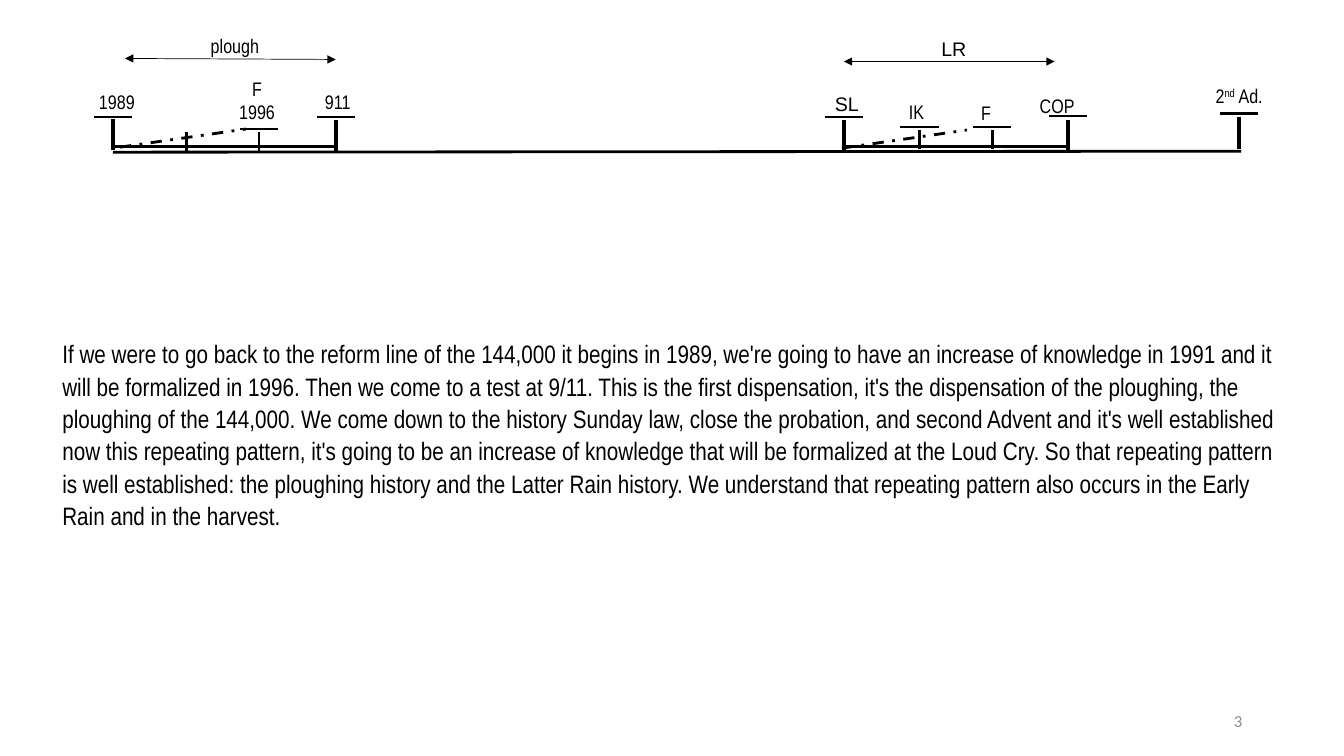
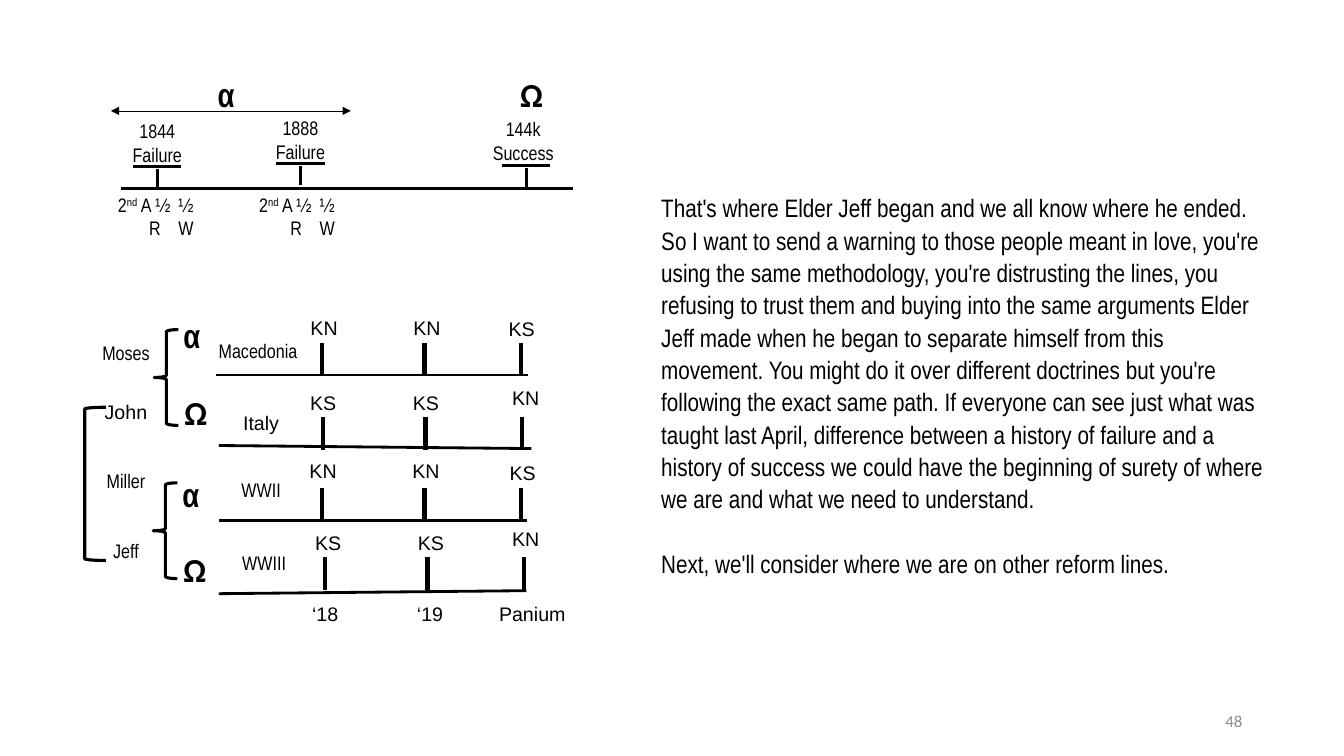
from lxml.etree import SubElement
from pptx import Presentation
from pptx.dml.color import RGBColor
from pptx.enum.dml import MSO_LINE
from pptx.enum.shapes import MSO_CONNECTOR, MSO_SHAPE
from pptx.enum.text import MSO_ANCHOR, PP_ALIGN
from pptx.oxml.ns import qn
from pptx.util import Inches, Pt

COLORS = {"ink": "000000", "page_number": "8C8C8C"}
NARROW, SANS, PLAIN = "Arial Narrow", "Arial", "Calibri"


class Sketch:
    """Holds the deck, its style and the current page."""

    def __init__(self):
        self.deck = Presentation()
        self.deck.slide_width = Inches(13.33)
        self.deck.slide_height = Inches(7.5)
        self.page = None

    def new_page(self, number):
        self.page = self.deck.slides.add_slide(self.deck.slide_layouts[6])
        box = self.text([number], 9.42, 6.95, 3, 0.4, 12, PLAIN,
                        color="page_number", align=PP_ALIGN.RIGHT)
        box.text_frame.vertical_anchor = MSO_ANCHOR.MIDDLE

    def text(self, lines, left, top, width, height, size, font,
             color="ink", bold=False, align=PP_ALIGN.LEFT):
        """Add one paragraph per line; ^marks^ enclose superscript."""
        box = self.page.shapes.add_textbox(
            Inches(left), Inches(top), Inches(width), Inches(height))
        frame = box.text_frame
        frame.word_wrap = True
        for index, line in enumerate(lines):
            para = frame.add_paragraph() if index else frame.paragraphs[0]
            para.alignment = align
            for part, words in enumerate(line.split("^")):
                span = para.add_run()
                span.text = words
                span.font.size = Pt(size)
                span.font.name = font
                span.font.bold = bold
                span.font.color.rgb = RGBColor.from_string(COLORS[color])
                if part % 2:
                    span._r.get_or_add_rPr().set("baseline", "30000")
        return box

    def body(self, paragraphs, left, top, width, height):
        box = self.text(paragraphs, left, top, width, height, 18, NARROW)
        for index, para in enumerate(box.text_frame.paragraphs):
            para.line_spacing = 1.07
            para.space_before = Pt(23 if index else 0)

    def label(self, words, left, top, width=0.94, font=NARROW,
              align=PP_ALIGN.CENTER):
        lines = words.split("\n")
        box = self.text(lines, left, top, width, 0.31 * len(lines), 14, font,
                        align=align)
        frame = box.text_frame
        frame.margin_left = frame.margin_right = Inches(0.04)
        frame.margin_top = frame.margin_bottom = Inches(0.04)
        return box

    def tabbed_label(self, words, left, top, width, stops):
        box = self.label(words, left, top, width, align=PP_ALIGN.LEFT)
        for para in box.text_frame.paragraphs:
            tabs = SubElement(para._p.get_or_add_pPr(), qn("a:tabLst"))
            for stop in stops:
                SubElement(tabs, qn("a:tab"), pos=str(Inches(stop)), algn="l")

    def symbol(self, letter, left, top):
        font = NARROW if letter == "α" else PLAIN
        self.text([letter], left, top, 0.34, 0.5, 24, font, bold=True)

    def line(self, x1, y1, x2, y2, weight=2, dash=None, arrows=False):
        link = self.page.shapes.add_connector(
            MSO_CONNECTOR.STRAIGHT, Inches(x1), Inches(y1), Inches(x2), Inches(y2))
        self.stroke(link, weight)
        if dash:
            link.line.dash_style = dash
        if arrows:
            outline = link.line._get_or_add_ln()
            for end in ("a:headEnd", "a:tailEnd"):
                SubElement(outline, qn(end), type="triangle")
        SubElement(link._element.spPr, qn("a:effectLst"))

    def span_arrow(self, x1, y1, x2, y2):
        self.line(x1, y1, x2, y2, 0.5, arrows=True)

    def post(self, x, top, bottom, weight=2, cap=None, cap_width=0.38):
        """Add an upright mark, with a bar above it where cap is given."""
        self.line(x, top, x, bottom, weight)
        if cap:
            self.line(x - cap_width / 2, cap, x + cap_width / 2, cap)

    def bracket(self, kind, left, top, width, height):
        shape = self.page.shapes.add_shape(
            kind, Inches(left), Inches(top), Inches(width), Inches(height))
        shape.shadow.inherit = False
        shape.fill.background()
        self.stroke(shape, 2.25)

    @staticmethod
    def stroke(item, weight):
        item.line.color.rgb = RGBColor.from_string(COLORS["ink"])
        item.line.width = Pt(weight)


def build_reform_line(sketch):
    sketch.new_page("3")
    sketch.body([
        "If we were to go back to the reform line of the 144,000 it begins in 1989, "
        "we're going to have an increase of knowledge in 1991 and it will be "
        "formalized in 1996. Then we come to a test at 9/11. This is the first "
        "dispensation, it's the dispensation of the ploughing, the ploughing of the "
        "144,000. We come down to the history Sunday law, close the probation, and "
        "second Advent and it's well established now this repeating pattern, it's "
        "going to be an increase of knowledge that will be formalized at the Loud "
        "Cry. So that repeating pattern is well established: the ploughing history "
        "and the Latter Rain history. We understand that repeating pattern also "
        "occurs in the Early Rain and in the harvest."], 0.52, 3.29, 12.23, 2.03)

    # Time line with its two doubled stretches
    sketch.line(1.12, 1.51, 12.31, 1.5)
    sketch.line(1.12, 1.45, 3.34, 1.45)
    sketch.line(8.38, 1.45, 10.59, 1.45)

    # Main events, then the steps between them
    for x, top, bottom, cap in ((1.12, 1.18, 1.49, 1.16), (3.33, 1.19, 1.51, 1.16),
                                (8.37, 1.19, 1.5, 1.16), (10.59, 1.19, 1.5, 1.15),
                                (12.29, 1.16, 1.48, 1.13)):
        sketch.post(x, top, bottom, 3, cap)
    for x, top, bottom, cap in ((1.85, 1.31, 1.5, None), (2.57, 1.31, 1.5, 1.28),
                                (9.12, 1.29, 1.48, 1.26), (9.84, 1.29, 1.48, 1.26)):
        sketch.post(x, top, bottom, cap=cap)

    # Rising knowledge
    sketch.line(1.19, 1.46, 2.44, 1.28, dash=MSO_LINE.DASH_DOT)
    sketch.line(8.35, 1.47, 9.59, 1.29, dash=MSO_LINE.DASH_DOT)

    # Event names
    for words, left, top, width in (
            ("1989", 0.69, 0.85, 0.94), ("911", 2.88, 0.85, 0.94),
            ("F\n1996", 2.08, 0.72, 0.94), ("2^nd^ Ad.", 11.82, 0.79, 0.94),
            ("COP", 10.1, 0.89, 0.77), ("IK", 8.9, 0.95, 0.38),
            ("F", 9.59, 0.96, 0.38)):
        sketch.label(words, left, top, width)
    sketch.label("SL", 8.07, 0.87, 0.66, SANS)

    # Periods
    sketch.label("plough", 1.52, 0.3, 1.62)
    sketch.span_arrow(1.24, 0.58, 3.33, 0.59)
    sketch.label("LR", 8.65, 0.33, 1.62, SANS)
    sketch.span_arrow(8.37, 0.61, 10.46, 0.61)


def build_failure_and_success(sketch):
    sketch.new_page("48")
    sketch.body([
        "That's where Elder Jeff began and we all know where he ended. So I want to "
        "send a warning to those people meant in love, you're using the same "
        "methodology, you're distrusting the lines, you refusing to trust them and "
        "buying into the same arguments Elder Jeff made when he began to separate "
        "himself from this movement. You might do it over different doctrines but "
        "you're following the exact same path. If everyone can see just what was "
        "taught last April, difference between a history of failure and a history of "
        "success we could have the beginning of surety of where we are and what we "
        "need to understand.",
        "Next, we'll consider where we are on other reform lines."],
        6.46, 1.84, 6.22, 4.3)

    # Upper time line
    sketch.line(1.2, 1.87, 5.68, 1.87)
    sketch.span_arrow(1.1, 1.1, 3.48, 1.1)
    for words, left, top, x, cap in (("1844\nFailure", 1.2, 1.14, 1.56, 1.65),
                                     ("1888\nFailure", 2.62, 1.11, 2.98, 1.62),
                                     ("144k\nSuccess", 4.83, 1.12, 5.22, 1.64)):
        sketch.label(words, left, top, 0.72)
        sketch.post(x, cap + 0.03, cap + 0.22, cap=cap, cap_width=0.48)
    for left in (1.13, 2.53):
        sketch.tabbed_label("2^nd^ A ½\t½\n\tR\tW", left, 1.87, 1, (0.31, 0.6))

    # Four histories: name, base line, first post and its top, marks and places
    histories = (
        ("Macedonia", NARROW, 2.06, 3.32, (2.14, 3.72, 5.24, 3.72), 3.19, 3.4,
         ("KN", 3.03, 3.09), ("KS", 4.99, 3.1)),
        ("Italy", SANS, 2.09, 4.04, (2.17, 4.42, 5.27, 4.45), 3.2, 4.14,
         ("KS", 3.02, 3.84), ("KN", 5.03, 3.79)),
        ("WWII", NARROW, 2.09, 4.7, (2.17, 5.16, 5.23, 5.16), 3.19, 4.84,
         ("KN", 3.02, 4.51), ("KS", 5, 4.53)),
        ("WWIII", NARROW, 2.12, 5.43, (2.17, 5.89, 5.22, 5.86), 3.22, 5.53,
         ("KS", 3.07, 5.23), ("KN", 5.03, 5.19)),
    )
    for name, font, left, top, base, post_x, post_top, early, late in histories:
        sketch.line(*base)
        sketch.label(name, left, top, 1, font)
        for step in (0, 1.02, 1.98):
            sketch.post(post_x + step, post_top, post_top + 0.32, 3)
        mark, mark_left, mark_top = early
        for step in (0, 1.02):
            sketch.label(mark, mark_left + step, mark_top, 0.37, SANS)
        sketch.label(*late, 0.37, SANS)
    for words, left, width in (("‘18", 3.03, 0.39), ("‘19", 4.07, 0.39),
                               ("Panium", 4.75, 1.06)):
        sketch.label(words, left, 5.93, width, SANS)

    # Alpha and omega
    for letter, left, top in (("α", 2.06, 0.68), ("Ω", 5.06, 0.68),
                              ("α", 1.72, 3.08), ("Ω", 1.73, 3.84),
                              ("α", 1.71, 4.65), ("Ω", 1.72, 5.4)):
        sketch.symbol(letter, left, top)

    # People and the brackets that pair them
    for name, top, font in (("Moses", 3.34, NARROW), ("John", 3.93, SANS),
                            ("Miller", 4.61, NARROW), ("Jeff", 5.31, NARROW)):
        sketch.label(name, 0.75, top, 1, font)
    sketch.bracket(MSO_SHAPE.LEFT_BRACE, 1.53, 3.27, 0.24, 0.95)
    sketch.bracket(MSO_SHAPE.LEFT_BRACE, 1.52, 4.79, 0.24, 0.95)
    sketch.bracket(MSO_SHAPE.LEFT_BRACKET, 0.84, 4.04, 0.21, 1.52)


def main():
    sketch = Sketch()
    build_reform_line(sketch)
    build_failure_and_success(sketch)
    sketch.deck.save("out.pptx")


if __name__ == "__main__":
    main()
